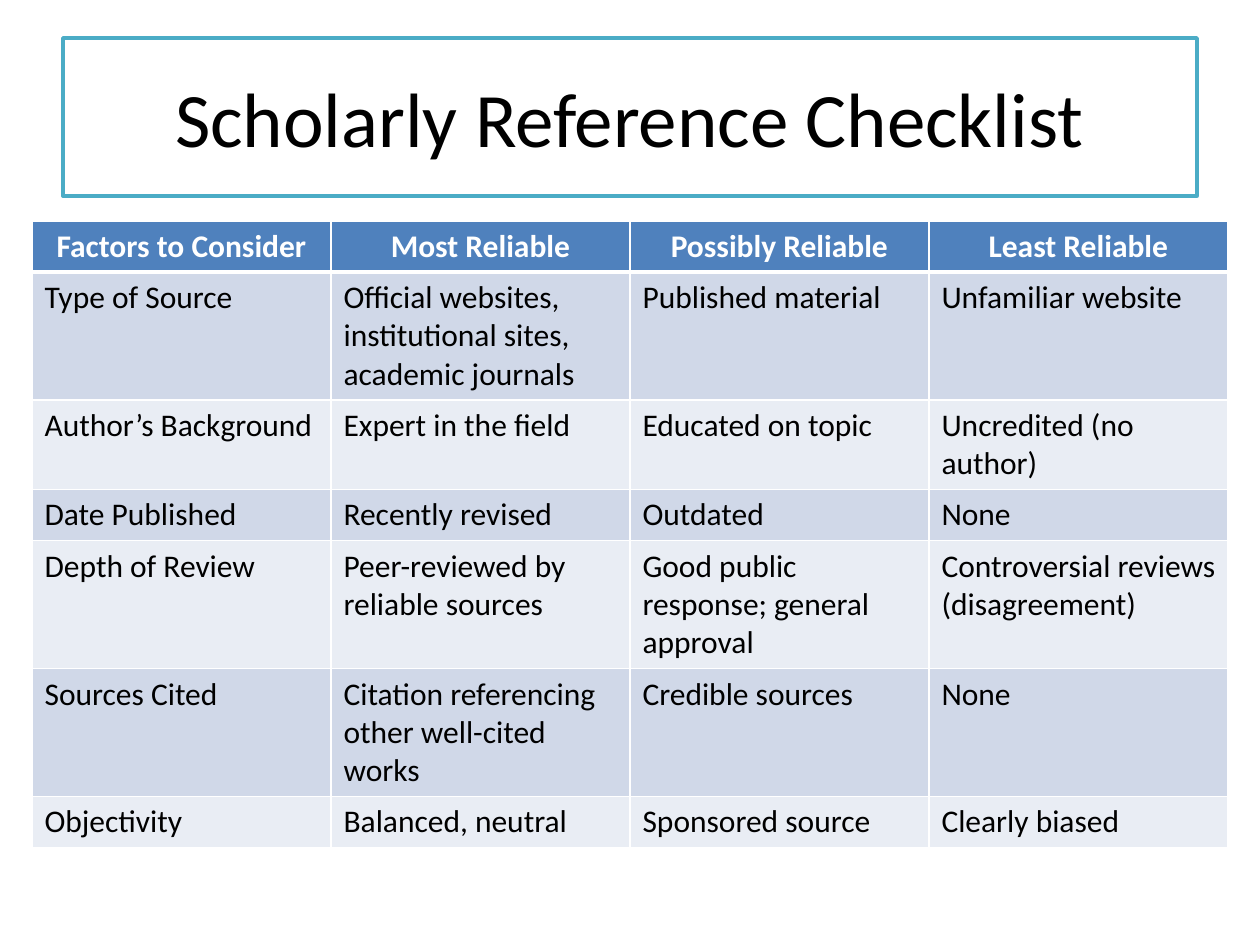
from dataclasses import dataclass

from lxml import etree
from pptx import Presentation
from pptx.dml.color import RGBColor
from pptx.enum.text import MSO_ANCHOR, PP_ALIGN
from pptx.oxml.ns import qn
from pptx.util import Emu, Pt

CENTER, LEFT = PP_ALIGN.CENTER, PP_ALIGN.LEFT
MIDDLE = MSO_ANCHOR.MIDDLE
TITLE_ONLY = 5


@dataclass(frozen=True)
class Theme:
    font: str = "Calibri"
    ink: str = "000000"
    paper: str = "FFFFFF"
    frame: str = "4BACC6"
    head: str = "4F81BD"
    bands: tuple = ("D0D8E8", "E9EDF4")
    title: int = 44
    body: int = 18
    thin: int = 1
    thick: int = 3


def px(n):
    """Turn pixels, 126 to the inch, into EMU."""
    return Emu(round(n * 914400 / 126))


def rgb(code):
    return RGBColor.from_string(code)


def write(frame, text, *, font, size, color, bold=False, align=LEFT):
    frame.text = text
    para = frame.paragraphs[0]
    para.alignment = align
    face = para.runs[0].font
    face.name, face.size, face.bold = font, Pt(size), bold
    face.color.rgb = rgb(color)


def edge(cell, side, color, width):
    """Add one cell border; call in the order L, R, T, B, before the fill."""
    line = etree.SubElement(cell._tc.get_or_add_tcPr(), qn(f"a:ln{side}"),
                            w=str(Pt(width)))
    fill = etree.SubElement(line, qn("a:solidFill"))
    etree.SubElement(fill, qn("a:srgbClr"), val=color)


class Deck:
    def __init__(self, theme, width, height):
        self.theme = theme
        self.prs = Presentation()
        self.prs.slide_width, self.prs.slide_height = px(width), px(height)
        self.slide = None

    def page(self):
        layout = self.prs.slide_layouts[TITLE_ONLY]
        self.slide = self.prs.slides.add_slide(layout)

    def title(self, text, left, top, width, height):
        look, box = self.theme, self.slide.shapes.title
        box.left, box.top = px(left), px(top)
        box.width, box.height = px(width), px(height)
        box.fill.solid()
        box.fill.fore_color.rgb = rgb(look.paper)
        box.line.color.rgb = rgb(look.frame)
        box.line.width = Pt(2)
        box.text_frame.vertical_anchor = MIDDLE
        write(box.text_frame, text, font=look.font, size=look.title,
              color=look.ink, align=CENTER)

    def table(self, rows, left, top, col, row):
        """Add a grid with a head row, columns col wide and rows row high."""
        wide, high = len(rows[0]), len(rows)
        grid = self.slide.shapes.add_table(
            high, wide, px(left), px(top), px(col * wide), px(row * high)).table
        for r, words in enumerate(rows):
            for c, text in enumerate(words):
                self.cell(grid.cell(r, c), text, r)

    def cell(self, cell, text, row):
        look, head = self.theme, row == 0
        rule = {"T": look.thick if row == 1 else look.thin,
                "B": look.thick if head else look.thin}
        for side in "LRTB":
            edge(cell, side, look.paper, rule.get(side, look.thin))
        cell.fill.solid()
        cell.fill.fore_color.rgb = rgb(
            look.head if head else look.bands[(row - 1) % 2])
        write(cell.text_frame, text, font=look.font, size=look.body, bold=head,
              color=look.paper if head else look.ink,
              align=CENTER if head else LEFT)


FACTORS = [
    ("Factors to Consider", "Most Reliable", "Possibly Reliable",
     "Least Reliable"),
    ("Type of Source",
     "Official websites, institutional sites, academic journals",
     "Published material", "Unfamiliar website"),
    ("Author’s Background", "Expert in the field", "Educated on topic",
     "Uncredited (no author)"),
    ("Date Published", "Recently revised", "Outdated", "None"),
    ("Depth of Review", "Peer-reviewed by reliable sources",
     "Good public response; general approval",
     "Controversial reviews (disagreement)"),
    ("Sources Cited", "Citation referencing other well-cited works",
     "Credible sources", "None"),
    ("Objectivity", "Balanced, neutral", "Sponsored source",
     "Clearly biased"),
]


def main():
    deck = Deck(Theme(), 1260, 945)
    deck.page()
    deck.title("Scholarly Reference Checklist", 63, 38, 1134, 158)
    deck.table(FACTORS, left=32, top=221, col=299, row=51)
    deck.prs.save("out.pptx")


if __name__ == "__main__":
    main()
